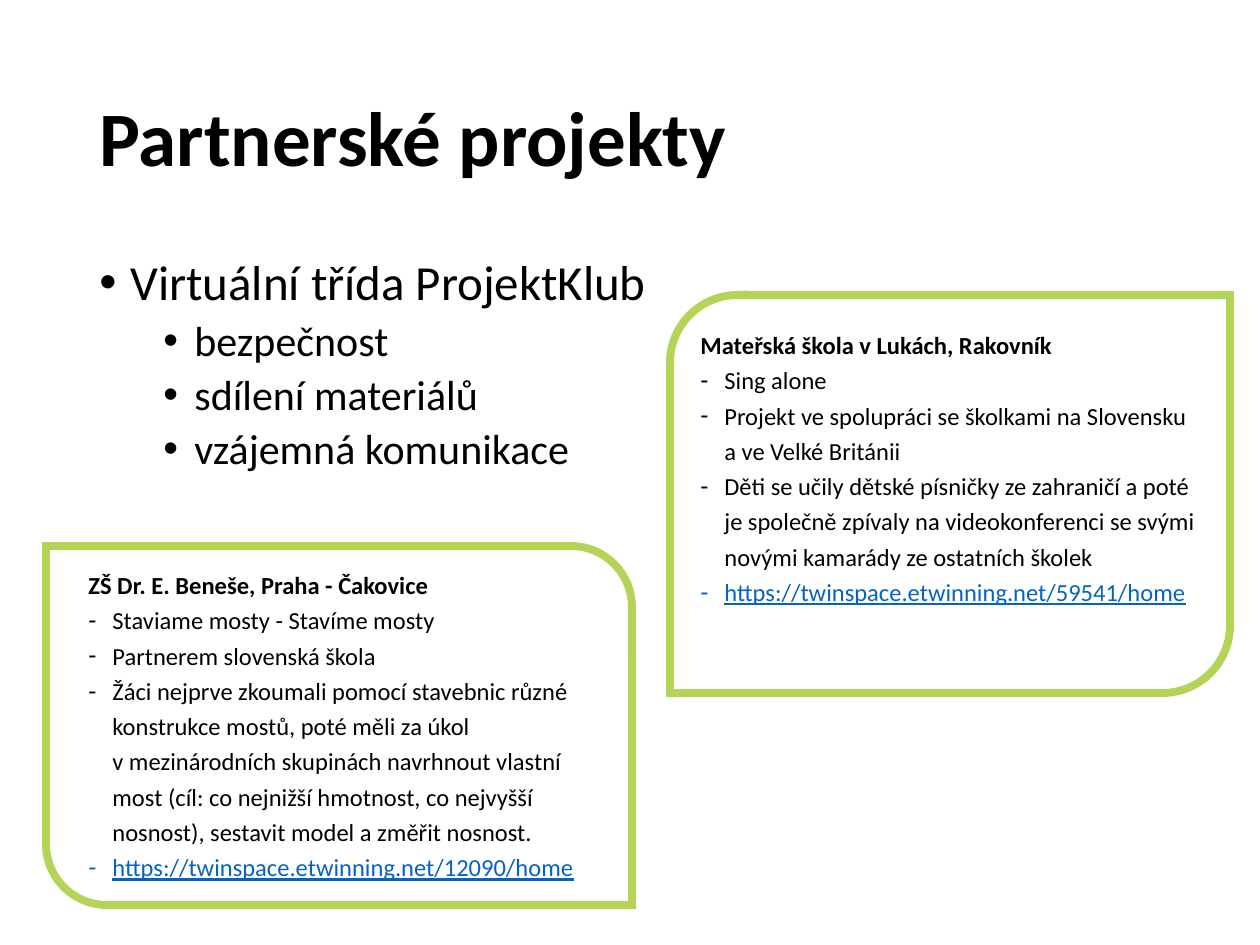
from lxml.etree import SubElement
from pptx import Presentation
from pptx.dml.color import RGBColor
from pptx.enum.shapes import MSO_SHAPE
from pptx.enum.text import MSO_ANCHOR
from pptx.oxml.ns import qn
from pptx.util import Emu, Pt

EMU_PER_PX = 914400 / 126
BLACK, GREEN, LINK_BLUE = "000000", "B4D457", "0563C1"

TITLE = {"size": Pt(44), "bold": True}
TOPIC = {"size": Pt(28)}
SUBTOPIC = {"size": Pt(24)}
HEADING = {"size": Pt(14), "bold": True}
DETAIL = {"size": Pt(14)}
LINK = {"size": Pt(14), "underline": True}

TOPICS = ["bezpečnost", "sdílení materiálů", "vzájemná komunikace"]
PROJECTS = [
    {
        "frame": (670, 295, 560, 398),
        "corners": (0.17, 0),
        "text_box": (688, 318, 525, 334),
        "school": "Mateřská škola v Lukách, Rakovník",
        "details": [
            "Sing alone",
            "Projekt ve spolupráci se školkami na Slovensku a ve Velké Británii",
            "Děti se učily dětské písničky ze zahraničí a poté je společně zpívaly "
            "na videokonferenci se svými novými kamarády ze ostatních školek",
        ],
        "address": "https://twinspace.etwinning.net/59541/home",
    },
    {
        "frame": (46, 546, 586, 359),
        "corners": (0, 0.17),
        "text_box": (76, 558, 547, 334),
        "school": "ZŠ Dr. E. Beneše, Praha - Čakovice",
        "details": [
            "Staviame mosty - Stavíme mosty",
            "Partnerem slovenská škola",
            "Žáci nejprve zkoumali pomocí stavebnic různé konstrukce mostů, "
            "poté měli za úkol \nv mezinárodních skupinách navrhnout vlastní most "
            "(cíl: co nejnižší hmotnost, co nejvyšší nosnost), sestavit model "
            "a změřit nosnost.",
        ],
        "address": "https://twinspace.etwinning.net/12090/home",
    },
]


def px(length):
    """Turn a length in px into EMU."""
    return Emu(round(length * EMU_PER_PX))


def color(value):
    """Turn a hex string into a colour."""
    return RGBColor.from_string(value)


def add_text_box(slide, box, anchor=MSO_ANCHOR.TOP):
    """Add an empty wrapping text box and return its text frame."""
    text_frame = slide.shapes.add_textbox(*map(px, box)).text_frame
    text_frame.word_wrap = True
    text_frame.vertical_anchor = anchor
    return text_frame


def set_bullet(paragraph, bullet, indent, hanging):
    """Give a paragraph a bullet character with a hanging indent."""
    properties = paragraph._p.get_or_add_pPr()
    properties.set("marL", str(px(indent)))
    properties.set("indent", str(-px(hanging)))
    SubElement(properties, qn("a:buFont"), typeface="Arial")
    SubElement(properties, qn("a:buChar"), char=bullet)


def add_paragraph(text_frame, text, font_format, spacing, before=0, bullet=None, ink=BLACK):
    """Write one formatted paragraph, using the empty first one when free."""
    first = text_frame.paragraphs[0]
    paragraph = text_frame.add_paragraph() if first.runs else first
    paragraph.text = text
    if bullet:
        set_bullet(paragraph, *bullet)
    paragraph.line_spacing = spacing
    paragraph.space_before = Pt(before)
    for run in paragraph.runs:
        for name, value in {"name": "Calibri", **font_format}.items():
            setattr(run.font, name, value)
        run.font.color.rgb = color(ink)


def add_frame(slide, box, corners):
    """Add a green outline with two opposite corners rounded."""
    shape = slide.shapes.add_shape(MSO_SHAPE.ROUND_2_DIAG_RECTANGLE, *map(px, box))
    shape.shadow.inherit = False
    shape.fill.background()
    for index, radius in enumerate(corners):
        shape.adjustments[index] = radius
    shape.line.color.rgb = color(GREEN)
    shape.line.width = Pt(4.5)
    SubElement(shape.line._get_or_add_ln(), qn("a:miter"), lim="800000")


def add_project(slide, project):
    """Add a framed project description."""
    add_frame(slide, project["frame"], project["corners"])
    text_frame = add_text_box(slide, project["text_box"])
    add_paragraph(text_frame, project["school"], HEADING, 1.2)
    dash = ("-", 24, 24)
    for detail in project["details"]:
        add_paragraph(text_frame, detail, DETAIL, 1.2, bullet=dash)
    add_paragraph(text_frame, project["address"], LINK, 1.2, bullet=dash, ink=LINK_BLUE)


def main():
    """Build the slide and save it."""
    presentation = Presentation()
    presentation.slide_width, presentation.slide_height = px(1260), px(945)
    slide = presentation.slides.add_slide(presentation.slide_layouts[6])

    title = add_text_box(slide, (87, 50, 1086, 183), MSO_ANCHOR.MIDDLE)
    add_paragraph(title, "Partnerské projekty", TITLE, 0.9)

    body = add_text_box(slide, (87, 252, 1086, 600))
    add_paragraph(body, "Virtuální třída ProjektKlub", TOPIC, 0.9, bullet=("•", 31, 31))
    for topic in TOPICS:
        add_paragraph(body, topic, SUBTOPIC, 0.9, before=5, bullet=("•", 95, 31))

    for project in PROJECTS:
        add_project(slide, project)
    presentation.save("out.pptx")


if __name__ == "__main__":
    main()
